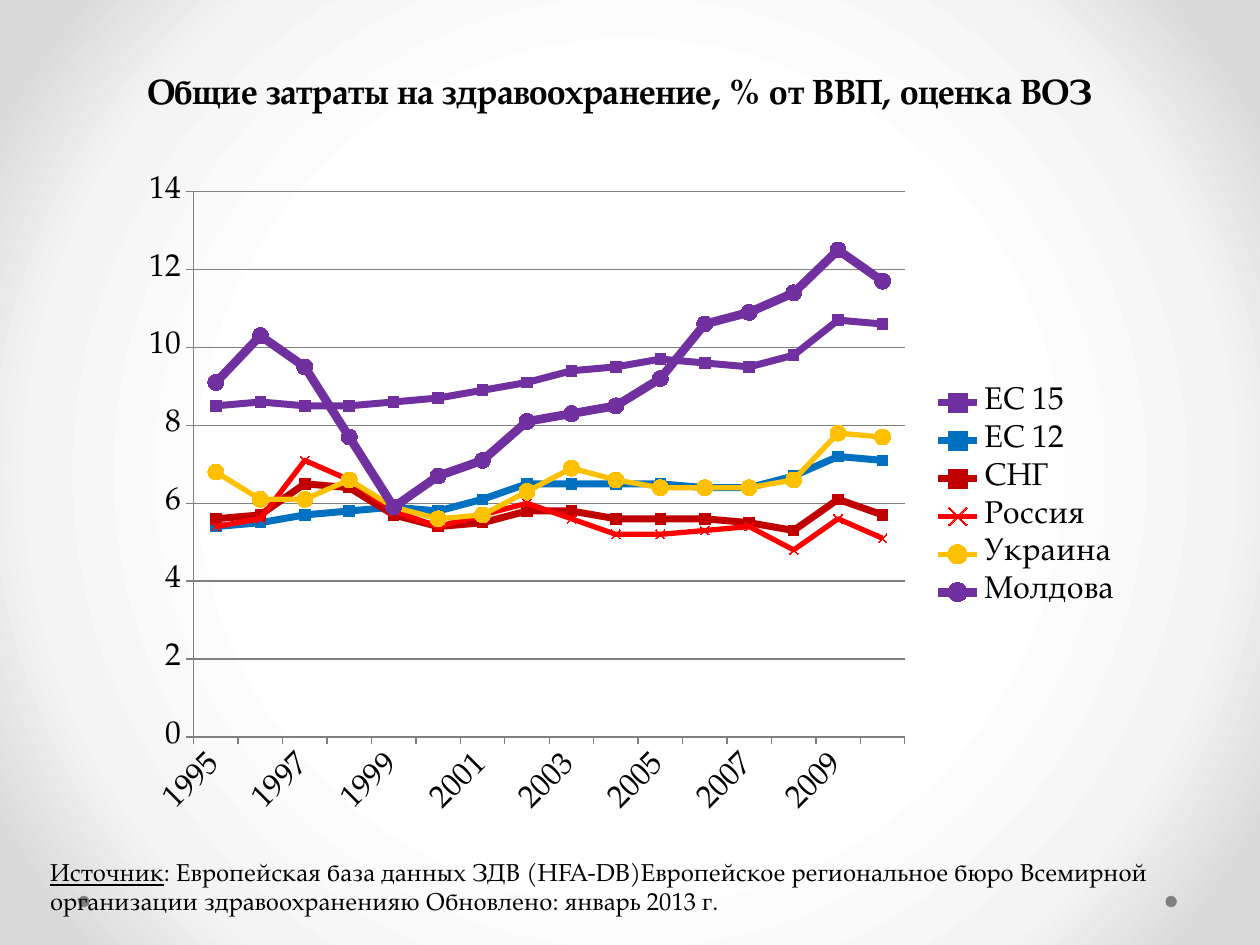
from pptx import Presentation, util as u
from pptx.chart.data import CategoryChartData
from pptx.dml.color import RGBColor
from pptx.enum import chart as ch, shapes, text
from pptx.oxml import parse_xml
from pptx.oxml.ns import nsdecls, qn

WIDE, HIGH = u.Inches(10), u.Inches(7.5)
FONT = "TeX Gyre Pagella"
BLACK = RGBColor(0, 0, 0)
GRAY = RGBColor(0x80, 0x80, 0x80)
PURPLE = RGBColor(0x70, 0x30, 0xA0)
BLUE = RGBColor(0x00, 0x70, 0xC0)
MAROON = RGBColor(0xC0, 0x00, 0x00)
RED = RGBColor(0xFF, 0x00, 0x00)
GOLD = RGBColor(0xFF, 0xC0, 0x00)
SQUARE, CROSS, ROUND = (ch.XL_MARKER_STYLE.SQUARE, ch.XL_MARKER_STYLE.X,
                        ch.XL_MARKER_STYLE.CIRCLE)
STOPS = [(50, "FFFFFF"), (76, "F4F4F4"), (92, "DADADA")]
YEARS = [str(year) for year in range(1995, 2011)]
SERIES = [
    ("ЕС 15", PURPLE, 4, SQUARE, 6,
     [8.5, 8.6, 8.5, 8.5, 8.6, 8.7, 8.9, 9.1, 9.4, 9.5, 9.7, 9.6, 9.5, 9.8, 10.7, 10.6]),
    ("ЕС 12", BLUE, 4, SQUARE, 6,
     [5.4, 5.5, 5.7, 5.8, 5.9, 5.8, 6.1, 6.5, 6.5, 6.5, 6.5, 6.4, 6.4, 6.7, 7.2, 7.1]),
    ("СНГ", MAROON, 4, SQUARE, 6,
     [5.6, 5.7, 6.5, 6.4, 5.7, 5.4, 5.5, 5.8, 5.8, 5.6, 5.6, 5.6, 5.5, 5.3, 6.1, 5.7]),
    ("Россия", RED, 3, CROSS, 5,
     [5.4, 5.6, 7.1, 6.6, 5.8, 5.4, 5.7, 6, 5.6, 5.2, 5.2, 5.3, 5.4, 4.8, 5.6, 5.1]),
    ("Украина", GOLD, 3, ROUND, 9,
     [6.8, 6.1, 6.1, 6.6, 5.9, 5.6, 5.7, 6.3, 6.9, 6.6, 6.4, 6.4, 6.4, 6.6, 7.8, 7.7]),
    ("Молдова", PURPLE, 5, ROUND, 9,
     [9.1, 10.3, 9.5, 7.7, 5.9, 6.7, 7.1, 8.1, 8.3, 8.5, 9.2, 10.6, 10.9, 11.4, 12.5, 11.7]),
]


def place(left, top, wide, high):
    return [u.Inches(side) for side in (left, top, wide, high)]


def style(font, size, bold=False, under=False):
    font.name, font.size = FONT, u.Pt(size)
    font.bold, font.underline = bold, under
    font.color.rgb = BLACK


def write(slide, box, *parts, size, bold=False, align=text.PP_ALIGN.LEFT):
    frame = slide.shapes.add_textbox(*place(*box)).text_frame
    frame.word_wrap = True
    para = frame.paragraphs[0]
    para.alignment = align
    for words, under in parts:
        run = para.add_run()
        run.text = words
        style(run.font, size, bold, under)


def shade(slide):
    fill = slide.background.fill
    fill.gradient()
    stops = "".join(f'<a:gs pos="{pos * 1000}"><a:srgbClr val="{tone}"/></a:gs>'
                    for pos, tone in STOPS)
    grad = parse_xml(
        f'<a:gradFill {nsdecls("a")} rotWithShape="1"><a:gsLst>{stops}</a:gsLst>'
        '<a:path path="circle"><a:fillToRect l="50000" t="50000" r="50000" b="50000"/>'
        '</a:path></a:gradFill>')
    old = slide.background._cSld.find(".//" + qn("a:gradFill"))
    old.getparent().replace(old, grad)


def dot(slide, left):
    oval = slide.shapes.add_shape(shapes.MSO_SHAPE.OVAL, *place(left, 7.11, 0.09, 0.09))
    oval.shadow.inherit = False
    oval.fill.solid()
    oval.fill.fore_color.rgb = GRAY
    oval.line.fill.background()


def fit(chart, **shares):
    area = chart._chartSpace.find(".//" + qn("c:plotArea"))
    for old in area.findall(qn("c:layout")):
        area.remove(old)
    sides = "".join(f'<c:{key} val="{share}"/>' for key, share in shares.items())
    area.insert(0, parse_xml(
        f'<c:layout {nsdecls("c")}><c:manualLayout><c:layoutTarget val="inner"/>'
        f'<c:xMode val="edge"/><c:yMode val="edge"/>{sides}'
        '</c:manualLayout></c:layout>'))


def set_axes(chart):
    for axis in (chart.category_axis, chart.value_axis):
        style(axis.tick_labels.font, 18)
        axis.format.line.color.rgb = GRAY
        axis.major_tick_mark = ch.XL_TICK_MARK.OUTSIDE
    cat, val = chart.category_axis, chart.value_axis
    cat._element.find(qn("c:txPr")).find(qn("a:bodyPr")).set("rot", "-2700000")
    cat._element.find(qn("c:lblOffset")).addnext(
        parse_xml(f'<c:tickLblSkip {nsdecls("c")} val="2"/>'))
    val.minimum_scale, val.maximum_scale, val.major_unit = 0, 14, 2
    val.major_gridlines.format.line.color.rgb = GRAY


def plot(slide):
    data = CategoryChartData()
    data.categories = YEARS
    for name, *_, vals in SERIES:
        data.add_series(name, vals)
    chart = slide.shapes.add_chart(ch.XL_CHART_TYPE.LINE_MARKERS,
                                   *place(1.06, 1.31, 7.95, 5.28), data).chart
    style(chart.font, 18)
    chart.has_title = False
    chart.has_legend = True
    chart.legend.position = ch.XL_LEGEND_POSITION.RIGHT
    chart.legend.include_in_layout = False
    style(chart.legend.font, 18)
    chart.plots[0].vary_by_categories = False
    for line, (_, tone, width, mark, size, _) in zip(chart.plots[0].series, SERIES):
        line.smooth = False
        line.format.line.color.rgb = tone
        line.format.line.width = u.Pt(width)
        line.marker.style, line.marker.size = mark, size
        line.marker.format.fill.solid()
        line.marker.format.fill.fore_color.rgb = tone
        line.marker.format.line.color.rgb = tone
    set_axes(chart)
    fit(chart, x=0.06, y=0.04, w=0.71, h=0.82)


def main():
    deck = Presentation()
    deck.slide_width, deck.slide_height = WIDE, HIGH
    slide = deck.slides.add_slide(deck.slide_layouts[6])
    shade(slide)
    for left in (9.25, 0.62):
        dot(slide, left)
    plot(slide)
    write(slide, (0.43, 0.5, 8.98, 0.44),
          ("Общие затраты на здравоохранение, % от ВВП, оценка ВОЗ", False),
          size=20, bold=True, align=text.PP_ALIGN.CENTER)
    write(slide, (0.3, 6.75, 9.33, 0.57), ("Источник", True),
          (": Европейская база данных ЗДВ (HFA-DB)Европейское региональное бюро "
           "Всемирной организации здравоохраненияю Обновлено: январь 2013 г.", False),
          size=14)
    deck.save("out.pptx")


if __name__ == "__main__":
    main()
